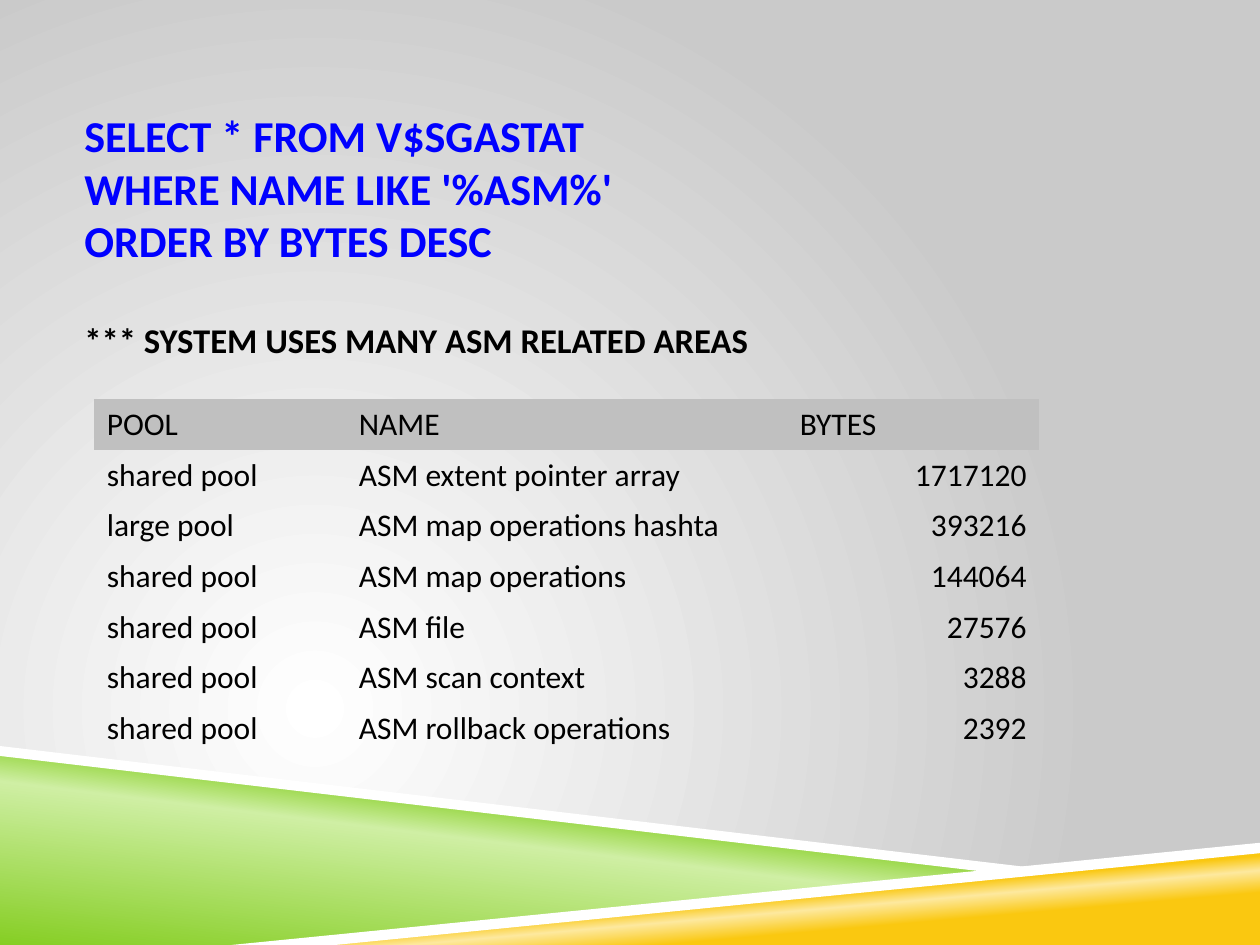
from dataclasses import dataclass

from lxml.etree import SubElement
from pptx import Presentation
from pptx.dml.color import RGBColor
from pptx.enum.text import MSO_ANCHOR, PP_ALIGN
from pptx.oxml.ns import qn
from pptx.util import Cm, Pt


@dataclass(frozen=True)
class Theme:
    """Hold the colours, font and type sizes of the slide."""
    font: str = "Calibri"
    text: str = "000000"
    query: str = "0000FF"
    header: str = "C0C0C0"
    stripe: str = "FFFFFF"
    backdrop: tuple = ((0, "FFFFFF"), (100, "CACACA"))
    green: tuple = ((0, "86CE24"), (52, "CFEFA4"), (66, "86CE24"))
    yellow: tuple = ((28, "FAC810"), (40, "FDE99F"), (48, "FAC810"))
    query_size: float = 25.2
    query_line: float = 30
    note_size: float = 19.8
    table_size: float = 18


THEME = Theme()
PLAIN_TABLE_STYLE = "{2D5ABB26-0587-4C30-8999-92F81FD0307C}"

QUERY = (
    "SELECT * FROM V$SGASTAT",
    "WHERE NAME LIKE '%ASM%'",
    "ORDER BY BYTES DESC",
)
NOTE = "*** SYSTEM USES MANY ASM RELATED AREAS"
AREAS = (
    ("POOL", "NAME", "BYTES"),
    ("shared pool", "ASM extent pointer array", "1717120"),
    ("large pool", "ASM map operations hashta", "393216"),
    ("shared pool", "ASM map operations", "144064"),
    ("shared pool", "ASM file", "27576"),
    ("shared pool", "ASM scan context", "3288"),
    ("shared pool", "ASM rollback operations", "2392"),
)

GREEN_WEDGE = ((0, 15.16), (20.12, 17.58), (5.08, 19.05), (0, 19.05))
YELLOW_WEDGE = ((5.03, 19.05), (25.4, 17.07), (25.4, 19.05))
LEFT_STRIPE = ((0, 15.04), (0, 15.24), (20.07, 17.6), (21.13, 17.53))
RIGHT_STRIPE = ((25.4, 16.99), (4.67, 19.05), (6.76, 19.05), (25.4, 17.2))


def paint_gradient(fill, stops, angle=None):
    """Fill with a linear gradient, or a circular one if no angle is given."""
    fill.gradient()
    gradient = fill._xPr.find(qn("a:gradFill"))
    for child in list(gradient):
        gradient.remove(child)
    stop_list = SubElement(gradient, qn("a:gsLst"))
    for position, colour in stops:
        stop = SubElement(stop_list, qn("a:gs"), pos=str(position * 1000))
        SubElement(stop, qn("a:srgbClr"), val=colour)
    if angle is None:
        circle = SubElement(gradient, qn("a:path"), path="circle")
        SubElement(circle, qn("a:fillToRect"),
                   l="50000", t="100000", r="100000", b="50000")
    else:
        SubElement(gradient, qn("a:lin"), ang=str(angle * 60000), scaled="0")


def add_polygon(page, corners):
    """Add a closed outline through corners given in centimetres."""
    points = [(Cm(x), Cm(y)) for x, y in corners]
    builder = page.shapes.build_freeform(*points[0])
    builder.add_line_segments(points[1:], close=True)
    polygon = builder.convert_to_shape()
    polygon.shadow.inherit = False
    polygon.line.fill.background()
    return polygon


def add_decoration(page):
    """Add the two gradient wedges and their white edges."""
    paint_gradient(add_polygon(page, GREEN_WEDGE).fill, THEME.green, 277)
    paint_gradient(add_polygon(page, YELLOW_WEDGE).fill, THEME.yellow, 265)
    for corners in (LEFT_STRIPE, RIGHT_STRIPE):
        stripe = add_polygon(page, corners)
        stripe.fill.solid()
        stripe.fill.fore_color.rgb = RGBColor.from_string(THEME.stripe)


def format_runs(para, size, colour, bold=False):
    """Apply the theme font to every run of a paragraph."""
    for span in para.runs:
        span.font.name = THEME.font
        span.font.size = Pt(size)
        span.font.bold = bold
        span.font.color.rgb = RGBColor.from_string(colour)


def add_heading(page):
    """Add the query and the note below it."""
    box = page.shapes.add_textbox(Cm(1.7), Cm(2.2), Cm(20.12), Cm(5.1))
    frame = box.text_frame
    frame.word_wrap = True
    frame.margin_left = frame.margin_right = 0
    frame.margin_top = frame.margin_bottom = 0
    frame.text = "\n".join((*QUERY, NOTE))
    *query_lines, note = frame.paragraphs
    for para in query_lines:
        para.line_spacing = Pt(THEME.query_line)
        format_runs(para, THEME.query_size, THEME.query, bold=True)
    note.space_before = Pt(30)
    format_runs(note, THEME.note_size, THEME.text, bold=True)


def add_area_table(page):
    """Add the table of memory areas with a grey header row."""
    widths = (5.08, 8.89, 5.08)
    row_height = 1.02
    frame = page.shapes.add_table(
        len(AREAS), len(widths), Cm(1.9), Cm(8.05),
        Cm(sum(widths)), Cm(row_height * len(AREAS)))
    table = frame.table
    table.first_row = table.horz_banding = False
    table._tbl.tblPr.find(qn("a:tableStyleId")).text = PLAIN_TABLE_STYLE
    for column, width in zip(table.columns, widths):
        column.width = Cm(width)
    for row_index, values in enumerate(AREAS):
        table.rows[row_index].height = Cm(row_height)
        for column_index, value in enumerate(values):
            cell = table.cell(row_index, column_index)
            cell.vertical_anchor = MSO_ANCHOR.MIDDLE
            cell.text_frame.text = value
            para = cell.text_frame.paragraphs[0]
            format_runs(para, THEME.table_size, THEME.text)
            if row_index == 0:
                cell.fill.solid()
                cell.fill.fore_color.rgb = RGBColor.from_string(THEME.header)
            else:
                cell.fill.background()
                if column_index == 2:
                    para.alignment = PP_ALIGN.RIGHT


def main():
    """Build the slide and save it."""
    deck = Presentation()
    deck.slide_width, deck.slide_height = Cm(25.4), Cm(19.05)
    page = deck.slides.add_slide(deck.slide_layouts[6])
    paint_gradient(page.background.fill, THEME.backdrop)
    add_decoration(page)
    add_heading(page)
    add_area_table(page)
    deck.save("out.pptx")


if __name__ == "__main__":
    main()
